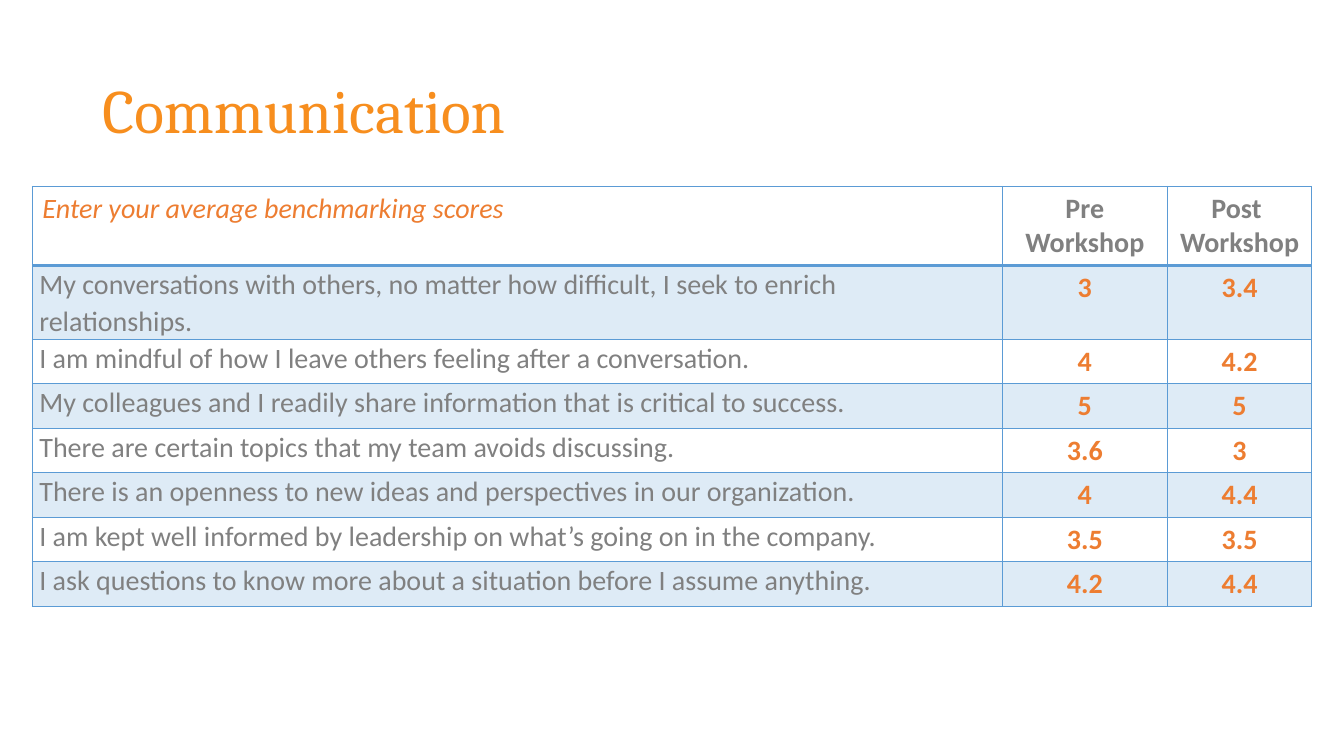
from lxml import etree
from pptx import Presentation, util as u
from pptx.dml.color import RGBColor
from pptx.enum import text
from pptx.oxml import ns

COLORS = {"title": "F78E1E", "accent": "ED7D31", "body": "808080", "blue": "5B9BD5"}
COLS, ROWS = 32, 18

SCORES = [
    ("My conversations with others, no matter how difficult, I seek to enrich relationships.", "3", "3.4"),
    ("I am mindful of how I leave others feeling after a conversation.", "4", "4.2"),
    ("My colleagues and I readily share information that is critical to success.", "5", "5"),
    ("There are certain topics that my team avoids discussing.", "3.6", "3"),
    ("There is an openness to new ideas and perspectives in our organization.", "4", "4.4"),
    ("I am kept well informed by leadership on what’s going on in the company.", "3.5", "3.5"),
    ("I ask questions to know more about a situation before I assume anything.", "4.2", "4.4"),
]


class Deck:
    """Style and current slide; lengths are grid columns and rows."""

    def __init__(self):
        self.prs = Presentation()
        self.prs.slide_width, self.prs.slide_height = u.Inches(13.33), u.Inches(7.5)
        self.s = self.prs.slides.add_slide(self.prs.slide_layouts[6])

    def x(self, cols):
        return round(self.prs.slide_width * cols / COLS)

    def y(self, rows):
        return round(self.prs.slide_height * rows / ROWS)

    def run(self, p, words, color, size=20, font="Calibri", bold=False, italic=False):
        r = p.add_run()
        r.text = words
        r.font.name, r.font.size = font, u.Pt(size)
        r.font.bold, r.font.italic = bold, italic
        r.font.color.rgb = RGBColor.from_string(COLORS[color])

    def title(self, left, top, width, height, words):
        sp = self.s.shapes.add_textbox(self.x(left), self.y(top), self.x(width), self.y(height))
        tf = sp.text_frame
        tf.word_wrap = True
        tf.vertical_anchor = text.MSO_ANCHOR.MIDDLE
        p = tf.paragraphs[0]
        p.line_spacing = 0.9
        self.run(p, words, "title", 44, "Cambria")

    def table(self, left, top, widths, heights):
        frame = self.s.shapes.add_table(len(heights), len(widths), self.x(left), self.y(top),
                                        self.x(sum(widths)), self.y(sum(heights)))
        table = frame.table
        table.first_row = table.horz_banding = False
        for column, width in zip(table.columns, widths):
            column.width = self.x(width)
        for row, height in zip(table.rows, heights):
            row.height = self.y(height)
        return table

    def borders(self, cell, top=1, bottom=1):
        tc_pr = cell._tc.get_or_add_tcPr()
        for side, points in (("L", 1), ("R", 1), ("T", top), ("B", bottom)):
            ln = etree.SubElement(tc_pr, ns.qn(f"a:ln{side}"), w=str(u.Pt(points)))
            fill = etree.SubElement(ln, ns.qn("a:solidFill"))
            etree.SubElement(fill, ns.qn("a:srgbClr"), val=COLORS["blue"])

    def cell(self, cell, lines, color, centered=True, tinted=False, top=1, bottom=1, **style):
        self.borders(cell, top, bottom)
        if tinted:
            cell.fill.solid()
            cell.fill.fore_color.rgb = RGBColor.from_string(COLORS["blue"])
            rgb = cell._tc.tcPr.find(ns.qn("a:solidFill"))[0]
            etree.SubElement(rgb, ns.qn("a:alpha"), val="20000")
        else:
            cell.fill.background()
        tf = cell.text_frame
        for i, words in enumerate(lines):
            p = tf.add_paragraph() if i else tf.paragraphs[0]
            p.alignment = text.PP_ALIGN.CENTER if centered else text.PP_ALIGN.LEFT
            self.run(p, words, color, **style)

    def statement(self, cell, words, **style):
        self.cell(cell, [words], "body", centered=False, **style)
        cell.margin_left = cell.margin_right = u.Inches(0.07)
        cell.margin_top = cell.margin_bottom = 0
        cell.text_frame.paragraphs[0].line_spacing = 1.07


def main():
    deck = Deck()

    # Title
    deck.title(2.2, 0.96, 27.6, 3.48, "Communication")

    # Table header
    heights = [1.88, 1.76] + [1.06] * (len(SCORES) - 1)
    table = deck.table(0.77, 4.44, [23.09, 3.94, 3.43], heights)
    deck.cell(table.cell(0, 0), ["Enter your average benchmarking scores"], "accent",
              centered=False, bottom=2, italic=True)
    for col, lines in enumerate((["Pre Workshop"], ["Post ", "Workshop"]), 1):
        deck.cell(table.cell(0, col), lines, "body", bottom=2, bold=True)

    # Statements and scores, every other row tinted
    for row, (words, *scores) in enumerate(SCORES, 1):
        look = {"tinted": row % 2 == 1, "top": 2 if row == 1 else 1}
        deck.statement(table.cell(row, 0), words, **look)
        for col, score in enumerate(scores, 1):
            deck.cell(table.cell(row, col), [score], "accent", bold=True, **look)

    deck.prs.save("out.pptx")


if __name__ == "__main__":
    main()
